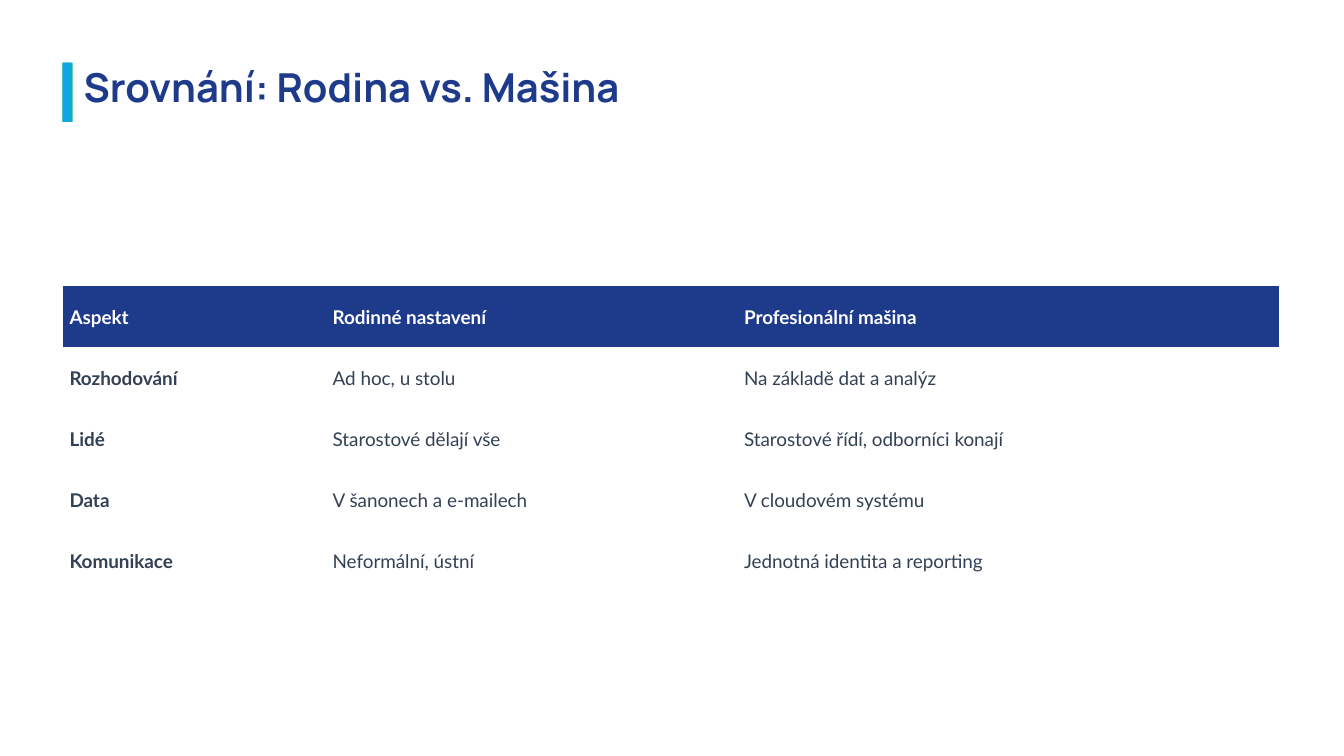
from dataclasses import dataclass

from pptx import Presentation
from pptx.dml.color import RGBColor
from pptx.enum.shapes import MSO_SHAPE
from pptx.enum.text import MSO_ANCHOR, MSO_AUTO_SIZE, PP_ALIGN
from pptx.oxml.ns import qn
from pptx.slide import Slide
from pptx.table import Table, _Cell
from pptx.text.text import TextFrame
from pptx.util import Inches, Pt


@dataclass(frozen=True)
class Theme:
    navy: str = "1E3A8A"
    slate: str = "334155"
    white: str = "FFFFFF"
    green: str = "10B981"
    sky: str = "0EA5E9"
    title_font: str = "Manrope"
    body_font: str = "Lato"
    title_size: float = 28.5
    body_size: float = 13.5


@dataclass(frozen=True)
class TextStyle:
    font: str
    size: float
    color: str
    bold: bool


@dataclass(frozen=True)
class Bar:
    width: float
    color: str


THEME = Theme()
TITLE_STYLE = TextStyle(THEME.title_font, THEME.title_size, THEME.navy, True)
HEADER_STYLE = TextStyle(THEME.body_font, THEME.body_size, THEME.white, True)
ASPECT_STYLE = TextStyle(THEME.body_font, THEME.body_size, THEME.slate, True)
VALUE_STYLE = TextStyle(THEME.body_font, THEME.body_size, THEME.slate, False)

LEFT, TOP, TITLE_HEIGHT = 0.62, 0.62, 0.59
TABLE_TOP, TABLE_HEIGHT = 2.84, 3.03
COLUMN_WIDTHS = (2.61, 4.08, 5.38)
NO_GRID_STYLE = "{2D5ABB26-0587-4C30-8999-92F81FD0307C}"

ACCENT_BARS = (Bar(0.1, THEME.green), Bar(0.08, THEME.sky))
COMPARISON = (
    ("Aspekt", "Rodinné nastavení", "Profesionální mašina"),
    ("Rozhodování", "Ad hoc, u stolu", "Na základě dat a analýz"),
    ("Lidé", "Starostové dělají vše", "Starostové řídí, odborníci konají"),
    ("Data", "V šanonech a e-mailech", "V cloudovém systému"),
    ("Komunikace", "Neformální, ústní", "Jednotná identita a reporting"),
)


def write_text(frame: TextFrame, text: str, style: TextStyle) -> None:
    para = frame.paragraphs[0]
    para.alignment = PP_ALIGN.LEFT
    span = para.add_run()
    span.text = text
    span.font.name = style.font
    span.font.size = Pt(style.size)
    span.font.bold = style.bold
    span.font.color.rgb = RGBColor.from_string(style.color)


def add_title(page: Slide, text: str) -> None:
    title = page.shapes.title
    title.left, title.top = Inches(0.83), Inches(TOP)
    title.width, title.height = Inches(12.47), Inches(TITLE_HEIGHT)
    frame = title.text_frame
    frame.margin_left = frame.margin_right = Inches(0)
    frame.margin_top = frame.margin_bottom = Inches(0)
    frame.vertical_anchor = MSO_ANCHOR.TOP
    frame.word_wrap = True
    frame.auto_size = MSO_AUTO_SIZE.SHAPE_TO_FIT_TEXT
    write_text(frame, text, TITLE_STYLE)


def add_bar(page: Slide, bar: Bar) -> None:
    shape = page.shapes.add_shape(
        MSO_SHAPE.RECTANGLE, Inches(LEFT), Inches(TOP), Inches(bar.width), Inches(TITLE_HEIGHT)
    )
    shape.shadow.inherit = False
    shape.fill.solid()
    shape.fill.fore_color.rgb = RGBColor.from_string(bar.color)
    shape.line.fill.background()


def fill_cell(cell: _Cell, text: str, row: int, column: int) -> None:
    cell.vertical_anchor = MSO_ANCHOR.MIDDLE
    cell.margin_left = cell.margin_right = Inches(0.07)
    cell.margin_top = cell.margin_bottom = Inches(0.03)
    if row == 0:
        cell.fill.solid()
        cell.fill.fore_color.rgb = RGBColor.from_string(THEME.navy)
        style = HEADER_STYLE
    else:
        cell.fill.background()
        style = ASPECT_STYLE if column == 0 else VALUE_STYLE
    write_text(cell.text_frame, text, style)


def add_comparison(page: Slide) -> Table:
    frame = page.shapes.add_table(
        len(COMPARISON), len(COLUMN_WIDTHS), Inches(LEFT), Inches(TABLE_TOP),
        Inches(sum(COLUMN_WIDTHS)), Inches(TABLE_HEIGHT),
    )
    table = frame.table
    table.horz_banding = False
    # Plain table style without grid lines
    frame._element.find(".//" + qn("a:tableStyleId")).text = NO_GRID_STYLE
    for column, width in zip(table.columns, COLUMN_WIDTHS):
        column.width = Inches(width)
    for row, texts in enumerate(COMPARISON):
        for column, text in enumerate(texts):
            fill_cell(table.cell(row, column), text, row, column)
    return table


def main() -> None:
    deck = Presentation()
    deck.slide_width, deck.slide_height = Inches(13.33), Inches(7.5)
    page = deck.slides.add_slide(deck.slide_layouts[5])
    page.background.fill.solid()
    page.background.fill.fore_color.rgb = RGBColor.from_string(THEME.white)

    # Comparison table
    add_comparison(page)

    # Title with its accent bars
    add_title(page, "Srovnání: Rodina vs. Mašina")
    for bar in ACCENT_BARS:
        add_bar(page, bar)

    deck.save("out.pptx")


if __name__ == "__main__":
    main()
